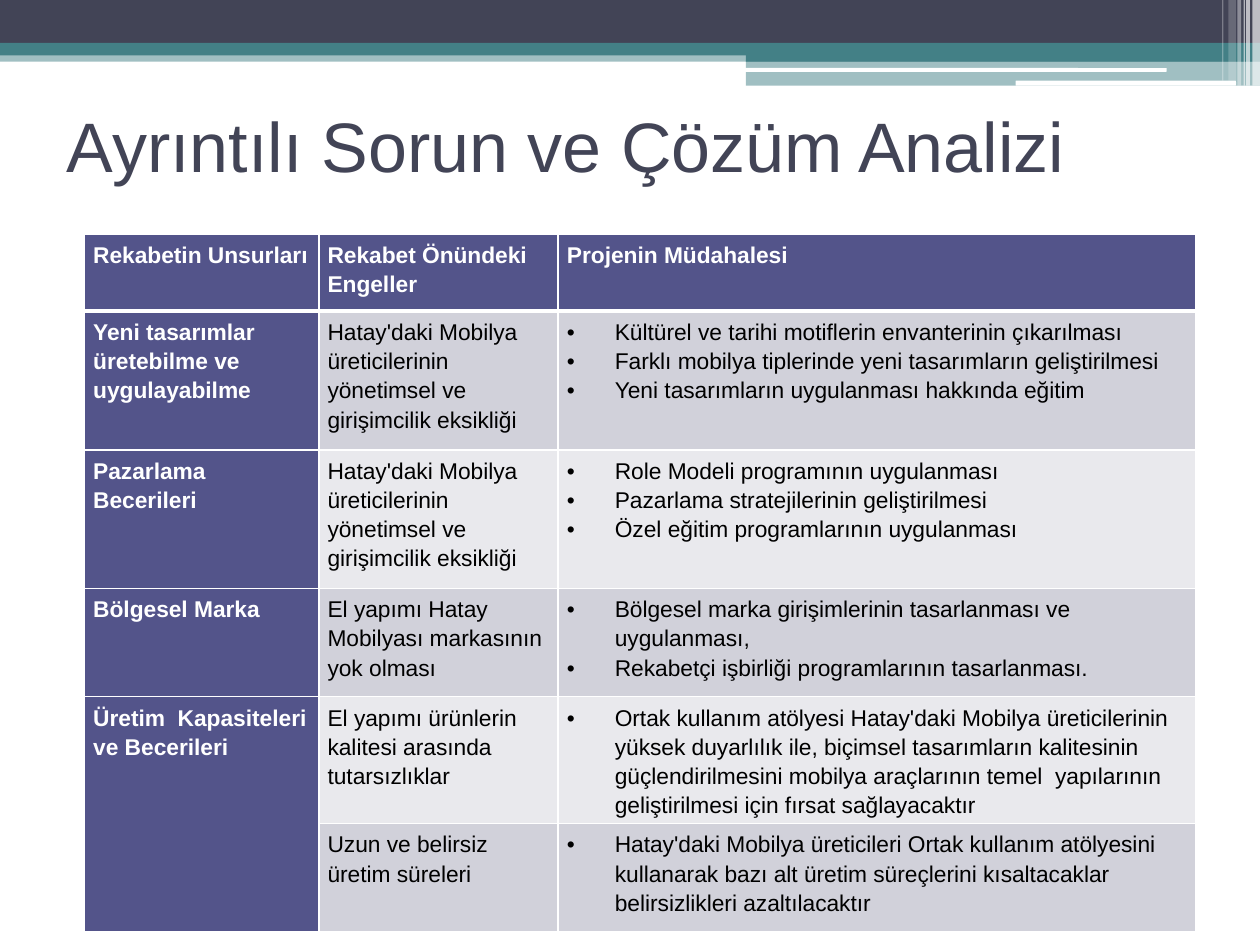
"""Build the problem and solution analysis slide with its table."""
from lxml import etree
from pptx import Presentation
from pptx import util as u
from pptx.dml.color import RGBColor
from pptx.enum import shapes, text
from pptx.oxml.ns import qn

FONT = "Arial"
WHITE, BLACK, NAVY, TEAL, VIOLET = "FFFFFF", "000000", "424456", "438086", "53548A"
BANDS = ("D1D1DA", "E9E9ED")
RECT, ROUND = shapes.MSO_SHAPE.RECTANGLE, shapes.MSO_SHAPE.ROUNDED_RECTANGLE

TITLE = "Ayrıntılı Sorun ve Çözüm Analizi"
HEADINGS = ("Rekabetin Unsurları", "Rekabet Önündeki Engeller", "Projenin Müdahalesi")
MANAGEMENT_GAP = "Hatay'daki Mobilya üreticilerinin yönetimsel ve girişimcilik eksikliği"
ROWS = [
    ("Yeni tasarımlar üretebilme ve uygulayabilme", MANAGEMENT_GAP, [
        "Kültürel ve tarihi motiflerin envanterinin çıkarılması",
        "Farklı mobilya tiplerinde yeni tasarımların geliştirilmesi",
        "Yeni tasarımların uygulanması hakkında eğitim"]),
    ("Pazarlama Becerileri", MANAGEMENT_GAP, [
        "Role Modeli programının uygulanması",
        "Pazarlama stratejilerinin geliştirilmesi",
        "Özel eğitim programlarının uygulanması"]),
    ("Bölgesel Marka", "El yapımı Hatay Mobilyası markasının yok olması", [
        "Bölgesel marka girişimlerinin tasarlanması ve uygulanması,",
        "Rekabetçi işbirliği programlarının tasarlanması."]),
    ("Üretim  Kapasiteleri ve Becerileri",
     "El yapımı ürünlerin kalitesi arasında tutarsızlıklar", [
         "Ortak kullanım atölyesi Hatay'daki Mobilya üreticilerinin yüksek duyarlılık ile, "
         "biçimsel tasarımların kalitesinin güçlendirilmesini mobilya araçlarının temel  "
         "yapılarının geliştirilmesi için fırsat sağlayacaktır"]),
    ("", "Uzun ve belirsiz üretim süreleri", [
        "Hatay'daki Mobilya üreticileri Ortak kullanım atölyesini kullanarak bazı alt üretim "
        "süreçlerini kısaltacaklar belirsizlikleri azaltılacaktır"]),
]
COLUMN_WIDTHS = (1.86, 1.9, 5.06)
ROW_HEIGHTS = (0.61, 1.1, 1.1, 0.86, 1, 0.86)

BANNER = [
    (RECT, 0, 0.4, 10, 0.09, TEAL, 50),
    (RECT, 0, 0, 10, 0.34, NAVY, 100),
    (RECT, 0, 0.34, 10, 0.1, TEAL, 100),
    (RECT, 5.92, 0.39, 4.08, 0.1, TEAL, 100),
    (RECT, 5.92, 0.48, 4.08, 0.2, TEAL, 50),
    (ROUND, 5.91, 0.54, 3.35, 0.03, WHITE, 100),
    (ROUND, 8.06, 0.64, 1.75, 0.04, WHITE, 100),
]
STRIPES = [(9.94, 0.06, 0.68, 65), (9.89, 0.03, 0.68, 65), (9.87, 0.01, 0.68, 60),
           (9.82, 0.03, 0.68, 40), (9.75, 0.06, 0.64, 20), (9.7, 0.01, 0.64, 30)]


def paint(fill, color, opacity=100):
    fill.solid()
    fill.fore_color.rgb = RGBColor.from_string(color)
    if opacity < 100:
        tint = fill._xPr.find(qn("a:solidFill"))[0]
        etree.SubElement(tint, qn("a:alpha"), val=str(opacity * 1000))


def add_bar(slide, kind, left, top, width, height, color, opacity):
    bar = slide.shapes.add_shape(kind, *map(u.Inches, (left, top, width, height)))
    bar.shadow.inherit = False
    bar.line.fill.background()
    paint(bar.fill, color, opacity)


def set_borders(cell, bottom):
    props = cell._tc.get_or_add_tcPr()
    for place, (side, points) in enumerate((("L", 1), ("R", 1), ("T", 1), ("B", bottom))):
        line = etree.Element(qn(f"a:ln{side}"), w=str(u.Pt(points)))
        solid = etree.SubElement(line, qn("a:solidFill"))
        etree.SubElement(solid, qn("a:srgbClr"), val=WHITE)
        props.insert(place, line)


def add_bullet(paragraph):
    props = paragraph._p.get_or_add_pPr()
    props.set("marL", str(u.Inches(0.38)))
    props.set("indent", str(u.Inches(-0.38)))
    etree.SubElement(props, qn("a:buFont"), typeface=FONT)
    etree.SubElement(props, qn("a:buChar"), char="•")


def fill_cell(cell, content, row, column):
    strong = row == 0 or column == 0
    bulleted = isinstance(content, list)
    cell.margin_left = cell.margin_right = u.Inches(0.07)
    cell.margin_top = cell.margin_bottom = u.Inches(0.04)
    cell.text = "\n".join(content) if bulleted else content
    for paragraph in cell.text_frame.paragraphs:
        paragraph.line_spacing = 1.15
        font = paragraph.font
        font.name, font.size, font.bold = FONT, u.Pt(13), strong
        paint(font.fill, WHITE if strong else BLACK)
        if bulleted:
            add_bullet(paragraph)
    paint(cell.fill, VIOLET if strong else BANDS[(row - 1) % 2])
    set_borders(cell, 3 if row == 0 else 1)


def add_analysis(slide):
    content = [HEADINGS, *ROWS]
    frame = slide.shapes.add_table(
        len(content), len(HEADINGS), u.Inches(0.67), u.Inches(1.86),
        u.Inches(sum(COLUMN_WIDTHS)), u.Inches(sum(ROW_HEIGHTS)))
    analysis = frame.table
    for column, width in zip(analysis.columns, COLUMN_WIDTHS):
        column.width = u.Inches(width)
    for row, height in zip(analysis.rows, ROW_HEIGHTS):
        row.height = u.Inches(height)
    for r, entries in enumerate(content):
        for c, entry in enumerate(entries):
            fill_cell(analysis.cell(r, c), entry, r, c)
    analysis.cell(4, 0).merge(analysis.cell(5, 0))


def set_title(slide):
    title = slide.shapes.title
    title.left, title.top, title.width, title.height = map(u.Inches, (0.43, 0.68, 9, 0.94))
    title.text_frame.text = TITLE
    title.text_frame.vertical_anchor = text.MSO_ANCHOR.MIDDLE
    heading = title.text_frame.paragraphs[0]
    heading.alignment = text.PP_ALIGN.LEFT
    heading.font.name, heading.font.size = FONT, u.Pt(40)
    paint(heading.font.fill, NAVY)


def main():
    deck = Presentation()
    deck.slide_width, deck.slide_height = u.Inches(10), u.Inches(7.5)
    slide = deck.slides.add_slide(deck.slide_layouts[5])
    for bar in BANNER:
        add_bar(slide, *bar)
    for left, width, height, opacity in STRIPES:
        add_bar(slide, RECT, left, 0, width, height, WHITE, opacity)
    set_title(slide)
    add_analysis(slide)
    deck.save("out.pptx")


if __name__ == "__main__":
    main()
